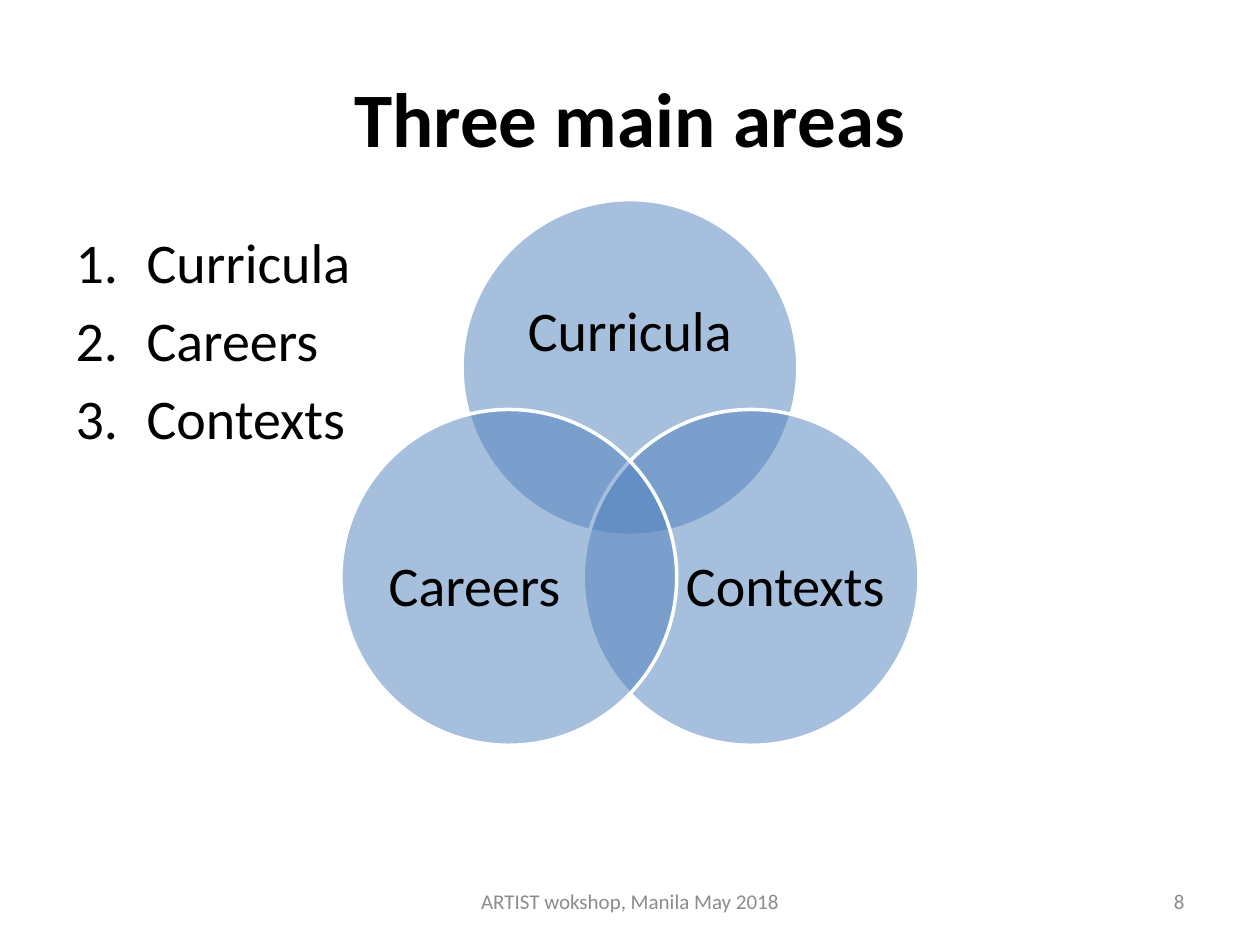
import math
from dataclasses import dataclass

import lxml.etree
import pptx
import pptx.dml.color
import pptx.enum.shapes
import pptx.enum.text
import pptx.oxml.ns
import pptx.util

Cm, Pt = pptx.util.Cm, pptx.util.Pt
RGB = pptx.dml.color.RGBColor
ALIGN = pptx.enum.text.PP_ALIGN
MIDDLE = pptx.enum.text.MSO_ANCHOR.MIDDLE
qn = pptx.oxml.ns.qn


@dataclass(frozen=True)
class Theme:
    font: str = "Calibri"
    text: RGB = RGB(0x00, 0x00, 0x00)
    muted: RGB = RGB(0x8C, 0x8C, 0x8C)
    circle: RGB = RGB(0x4F, 0x81, 0xBD)
    outline: RGB = RGB(0xFF, 0xFF, 0xFF)
    circle_alpha: int = 50
    title_size: float = 44
    body_size: float = 32
    footer_size: float = 12


@dataclass(frozen=True)
class Box:
    """A rectangle in centimetres."""
    left: float
    top: float
    width: float
    height: float

    def lengths(self) -> tuple:
        return Cm(self.left), Cm(self.top), Cm(self.width), Cm(self.height)


@dataclass(frozen=True)
class Area:
    """A Venn circle; the label is placed relative to the circle centre, in cm."""
    name: str
    angle: float
    label_dx: float
    label_dy: float
    label_width: float
    label_height: float


THEME = Theme()
AREAS = [
    Area("Curricula", -90, 0, -0.68, 4.98, 3.05),
    Area("Contexts", 30, 0.69, 0.23, 4.06, 3.73),
    Area("Careers", 150, -0.69, 0.23, 4.06, 3.73),
]
AGENDA = ["Curricula", "Careers", "Contexts"]
VENN_X, VENN_Y = 12.7, 10.23
VENN_SPREAD = 2.82
CIRCLE_SIZE = 6.77


def centred_box(x: float, y: float, width: float, height: float) -> Box:
    return Box(x - width / 2, y - height / 2, width, height)


def format_runs(p, size: float, color: RGB, bold: bool = False) -> None:
    for r in p.runs:
        r.font.name = THEME.font
        r.font.size = Pt(size)
        r.font.bold = bold
        r.font.color.rgb = color


def move(sp, box: Box) -> None:
    sp.left, sp.top, sp.width, sp.height = box.lengths()


def add_text(shapes, box: Box, text: str, size: float, color: RGB, align: ALIGN):
    tf = shapes.add_textbox(*box.lengths()).text_frame
    tf.word_wrap = True
    tf.vertical_anchor = MIDDLE
    tf.text = text
    p = tf.paragraphs[0]
    p.alignment = align
    format_runs(p, size, color)
    return tf


def number_paragraph(p, indent: float) -> None:
    """Give a paragraph an automatic 1. 2. 3. number with a hanging indent in cm."""
    pPr = p._p.get_or_add_pPr()
    pPr.set("marL", str(Cm(indent)))
    pPr.set("indent", str(-Cm(indent)))
    lxml.etree.SubElement(pPr, qn("a:buFont"), typeface="+mj-lt")
    lxml.etree.SubElement(pPr, qn("a:buAutoNum"), type="arabicPeriod")


def fill_title(sp, text: str) -> None:
    move(sp, Box(1.27, 0.76, 22.86, 3.18))
    sp.text_frame.text = text
    sp.text_frame.vertical_anchor = MIDDLE
    p = sp.text_frame.paragraphs[0]
    p.alignment = ALIGN.CENTER
    format_runs(p, THEME.title_size, THEME.text, bold=True)


def fill_list(sp, items: list[str]) -> None:
    move(sp, Box(1.27, 4.45, 22.86, 12.57))
    sp.text_frame.text = "\n".join(items)
    for p in sp.text_frame.paragraphs:
        p.space_before = Pt(0.2 * THEME.body_size)
        number_paragraph(p, 1.43)
        format_runs(p, THEME.body_size, THEME.text)


def add_circle(shapes, box: Box) -> None:
    sp = shapes.add_shape(pptx.enum.shapes.MSO_SHAPE.OVAL, *box.lengths())
    sp.shadow.inherit = False
    sp.fill.solid()
    sp.fill.fore_color.rgb = THEME.circle
    color = sp._element.spPr.find(qn("a:solidFill")).find(qn("a:srgbClr"))
    lxml.etree.SubElement(color, qn("a:alpha"), val=str(THEME.circle_alpha * 1000))
    sp.line.color.rgb = THEME.outline
    sp.line.width = Pt(2)


def add_area(shapes, area: Area) -> None:
    x = VENN_X + VENN_SPREAD * math.cos(math.radians(area.angle))
    y = VENN_Y + VENN_SPREAD * math.sin(math.radians(area.angle))
    add_circle(shapes, centred_box(x, y, CIRCLE_SIZE, CIRCLE_SIZE))
    label = centred_box(x + area.label_dx, y + area.label_dy,
                        area.label_width, area.label_height)
    tf = add_text(shapes, label, area.name, THEME.body_size, THEME.text, ALIGN.CENTER)
    tf.margin_left = tf.margin_right = tf.margin_top = tf.margin_bottom = 0
    p = tf.paragraphs[0]
    p.line_spacing = 0.9
    p.space_after = Pt(0.35 * THEME.body_size)


def main() -> None:
    prs = pptx.Presentation()
    prs.slide_width, prs.slide_height = Cm(25.4), Cm(19.05)
    s = prs.slides.add_slide(prs.slide_layouts[1])
    fill_title(s.shapes.title, "Three main areas")
    fill_list(s.placeholders[1], AGENDA)
    add_text(s.shapes, Box(18.2, 17.66, 5.93, 1.01), "8",
             THEME.footer_size, THEME.muted, ALIGN.RIGHT)
    add_text(s.shapes, Box(8.68, 17.66, 8.04, 1.01), "ARTIST wokshop, Manila May 2018",
             THEME.footer_size, THEME.muted, ALIGN.CENTER)
    venn = s.shapes.add_group_shape()
    for area in AREAS:
        add_area(venn.shapes, area)
    prs.save("out.pptx")


if __name__ == "__main__":
    main()
